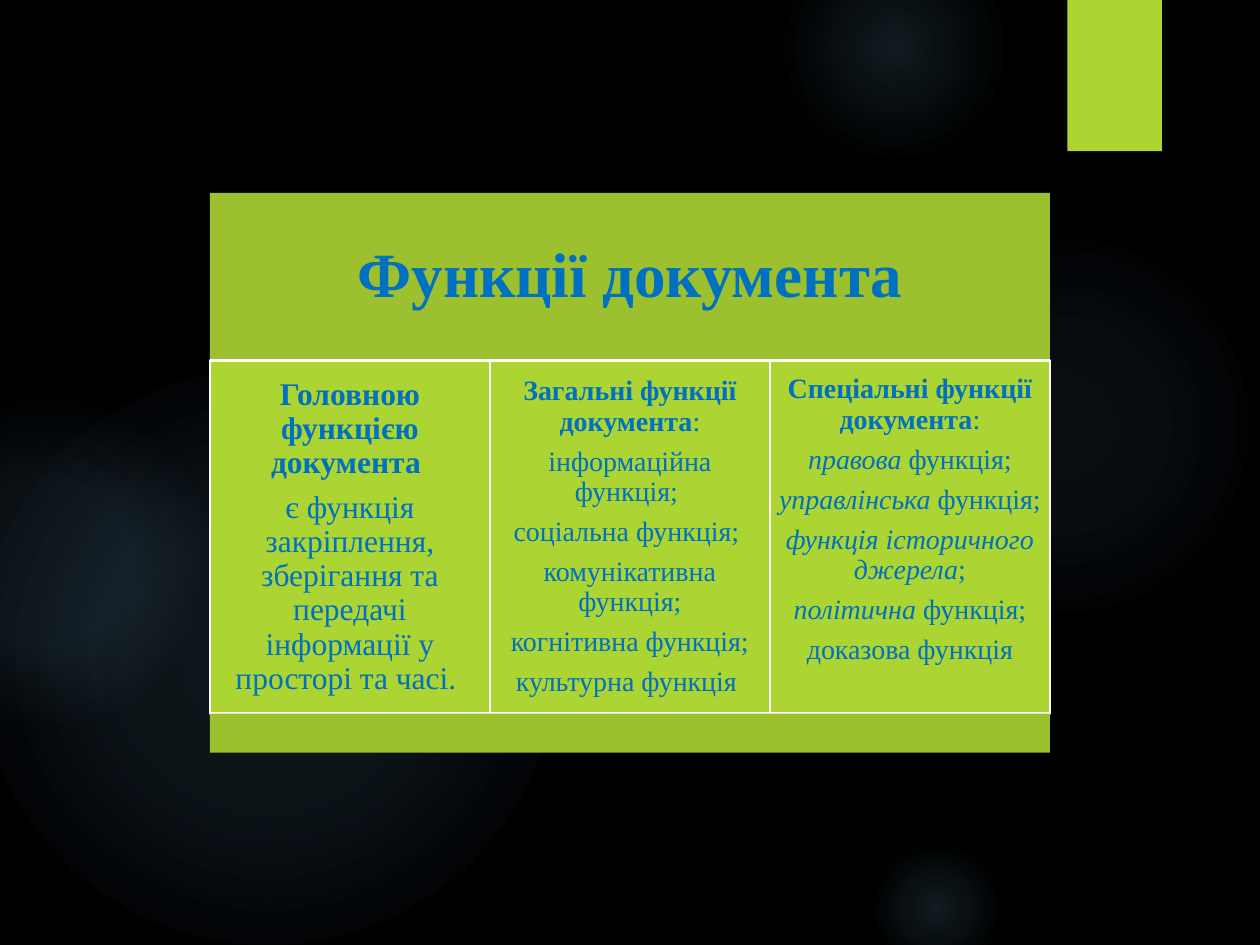
from dataclasses import dataclass

from pptx import Presentation, util as u
from pptx.dml.color import RGBColor
from pptx.enum import shapes, text
from pptx.oxml import parse_xml
from pptx.oxml.ns import nsdecls, qn

COLORS = {
    "night": "000000",
    "glow": "7AC4F0",
    "lime": "ACD433",
    "olive": "9CC02E",
    "blue": "0070C0",
    "white": "FFFFFF",
}


def rgb(name):
    return RGBColor.from_string(COLORS[name])


@dataclass
class Deck:
    """Style of the deck and the slide being drawn."""
    slide: object
    font: str = "Times New Roman"
    ink: str = "blue"
    line_spacing: float = 0.9
    gap_ratio: float = 0.35

    def background(self, color):
        fill = self.slide.background.fill
        fill.solid()
        fill.fore_color.rgb = rgb(color)

    def shape(self, kind, left, top, width, height):
        shape = self.slide.shapes.add_shape(
            kind, u.Pt(left), u.Pt(top), u.Pt(width), u.Pt(height))
        shape.shadow.inherit = False
        shape.line.fill.background()
        return shape

    def glow(self, left, top, size, stops):
        """Circle fading outwards; stops are (position %, opacity %)."""
        orb = self.shape(shapes.MSO_SHAPE.OVAL, left, top, size, size)
        orb.fill.background()
        stop_xml = "".join(
            f'<a:gs pos="{pos * 1000}"><a:srgbClr val="{COLORS["glow"]}">'
            f'<a:alpha val="{alpha * 1000}"/></a:srgbClr></a:gs>'
            for pos, alpha in stops)
        gradient = parse_xml(
            f'<a:gradFill {nsdecls("a")} rotWithShape="1"><a:gsLst>{stop_xml}</a:gsLst>'
            '<a:path path="circle"><a:fillToRect l="50000" t="50000" r="50000" b="50000"/>'
            '</a:path></a:gradFill>')
        properties = orb.element.spPr
        properties.replace(properties.find(qn("a:noFill")), gradient)

    def panel(self, left, top, width, height, fill, outline=None):
        panel = self.shape(shapes.MSO_SHAPE.RECTANGLE, left, top, width, height)
        panel.fill.solid()
        panel.fill.fore_color.rgb = rgb(fill)
        if outline:
            panel.line.color.rgb = rgb(outline)
            panel.line.width = u.Pt(1.5)
        return panel

    def label(self, panel, paragraphs, size, inset, top_inset=None):
        """Each paragraph is a list of (wording, style), style "b", "i" or ""."""
        frame = panel.text_frame
        frame.word_wrap = True
        frame.margin_left = frame.margin_right = frame.margin_bottom = u.Pt(inset)
        frame.margin_top = u.Pt(top_inset or inset)
        frame.vertical_anchor = (
            text.MSO_ANCHOR.TOP if top_inset else text.MSO_ANCHOR.MIDDLE)
        for index, parts in enumerate(paragraphs):
            paragraph = frame.add_paragraph() if index else frame.paragraphs[0]
            paragraph.alignment = text.PP_ALIGN.CENTER
            paragraph.line_spacing = self.line_spacing
            paragraph.space_after = u.Pt(self.gap_ratio * size)
            for wording, style in parts:
                run = paragraph.add_run()
                run.text = wording
                run.font.name = self.font
                run.font.size = u.Pt(size)
                run.font.bold = style == "b"
                run.font.italic = style == "i"
                run.font.color.rgb = rgb(self.ink)


GLOWS = [
    (496, 132, 222, [(0, 7), (36, 6), (69, 0)]),
    (448, -36, 126, [(0, 14), (36, 7), (73, 0)]),
    (496, 480, 78, [(0, 14), (36, 7), (66, 0)]),
    (-12, 210, 330, [(0, 11), (36, 10), (75, 0)]),
    (-66, 228, 186, [(0, 8), (36, 8), (72, 0)]),
]

MAIN = [
    [("Головною функцією документа ", "b")],
    [("є функція закріплення, зберігання та передачі інформації у просторі та часі. ", "")],
]
GENERAL = [
    [("Загальні функції документа", "b"), (":", "")],
    [("інформаційна функція; ", "")],
    [("соціальна функція; ", "")],
    [("комунікативна функція;", "")],
    [("когнітивна функція;", "")],
    [("культурна функція ", "")],
]
SPECIAL = [
    [("Спеціальні функції документа", "b"), (":", "")],
    [("правова", "i"), (" функція;", "")],
    [("управлінська", "i"), (" функція;", "")],
    [("функція історичного джерела", "i"), (";", "")],
    [("політична", "i"), (" функція;", "")],
    [("доказова функція", "")],
]
# Wording, text size, top inset where the column is set from the top
COLUMNS = [(MAIN, 18, None), (GENERAL, 16, None), (SPECIAL, 16, 8)]

LEFT, TOP, WIDTH = 120, 110.2, 480
TITLE_HEIGHT, COLUMN_HEIGHT, FOOT_HEIGHT = 96, 201.6, 22.4


def main():
    prs = Presentation()
    prs.slide_width, prs.slide_height = u.Pt(720), u.Pt(540)
    deck = Deck(prs.slides.add_slide(prs.slide_layouts[6]))

    # Backdrop: soft lights and the corner tab
    deck.background("night")
    for left, top, size, stops in GLOWS:
        deck.glow(left, top, size, stops)
    deck.panel(610, 0, 54, 86.4, "lime")

    # Title band
    title = deck.panel(LEFT, TOP, WIDTH, TITLE_HEIGHT, "olive")
    deck.label(title, [[("Функції документа", "b")]], 36, 10.8)

    # Three columns of functions
    columns_top = TOP + TITLE_HEIGHT
    column_width = WIDTH / len(COLUMNS)
    for index, (functions, size, top_inset) in enumerate(COLUMNS):
        column = deck.panel(LEFT + index * column_width, columns_top,
                            column_width, COLUMN_HEIGHT, "lime", "white")
        deck.label(column, functions, size, 5, top_inset)

    # Foot band
    deck.panel(LEFT, columns_top + COLUMN_HEIGHT, WIDTH, FOOT_HEIGHT, "olive")

    prs.save("out.pptx")


if __name__ == "__main__":
    main()
